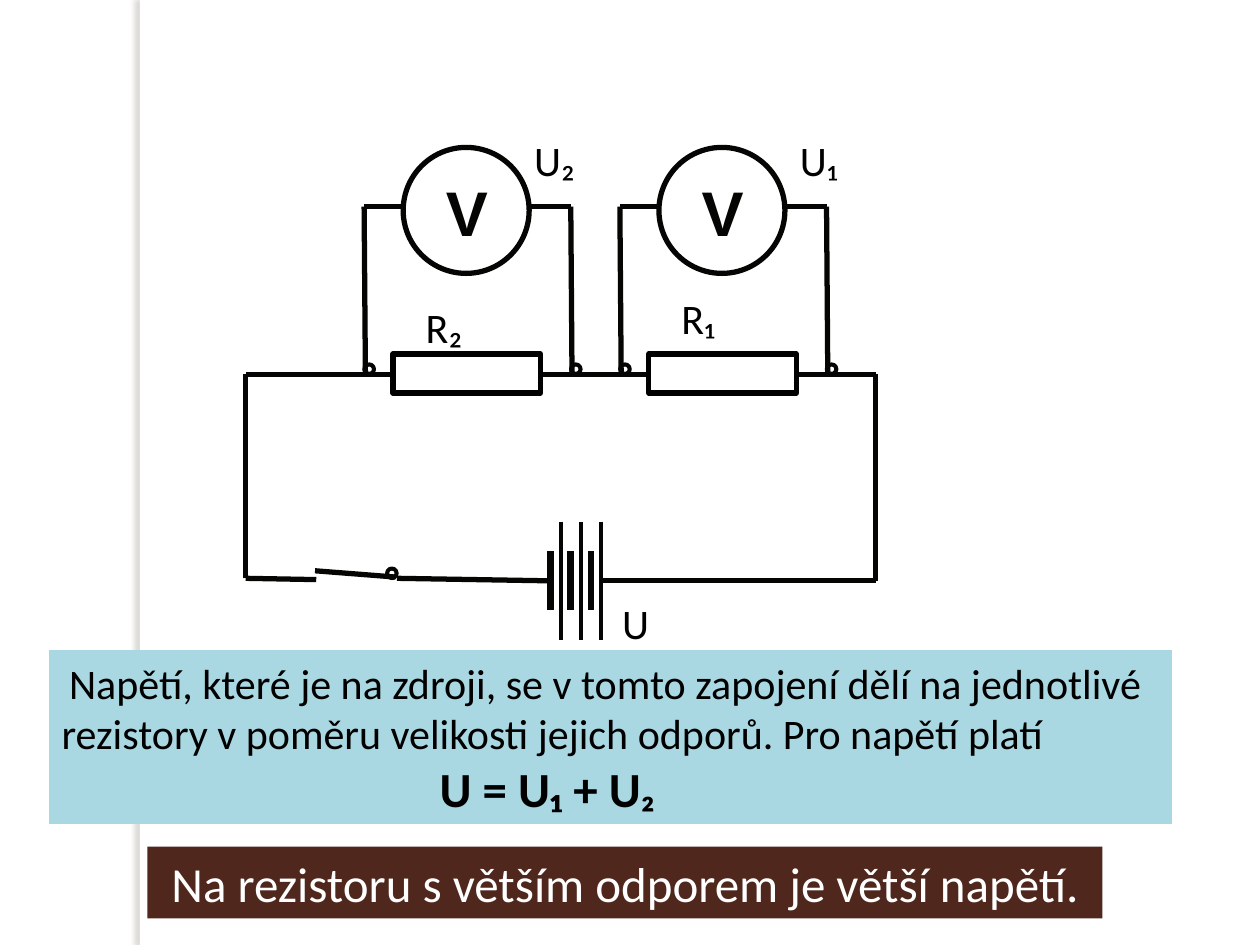
from dataclasses import dataclass

from lxml.etree import SubElement
from pptx import Presentation
from pptx.dml.color import RGBColor as Rgb
from pptx.enum.shapes import MSO_CONNECTOR as Connector, MSO_SHAPE as Shape
from pptx.enum.text import MSO_AUTO_SIZE as AutoSize, PP_ALIGN as Align
from pptx.oxml.ns import qn
from pptx.util import Inches, Pt


@dataclass(frozen=True)
class Theme:
    ink: str = "000000"
    wire: str = "050503"
    paper: str = "FFFFFF"
    note: str = "A9D7E2"
    banner: str = "4F271C"
    shade: str = "736F63"
    body_font: str = "Calibri"
    meter_font: str = "Arial"
    label_size: int = 24
    formula_size: int = 28
    meter_size: int = 36
    wire_width: float = 3
    thin_width: float = 2
    long_plate_width: float = 2.5
    short_plate_width: float = 3.75


class CircuitSlide:
    """Draws circuit elements and text on one slide in a shared theme."""

    def __init__(self, slide, theme):
        self.shapes = slide.shapes
        self.theme = theme

    def shape(self, kind, place, fill, line=None, width=None):
        item = self.shapes.add_shape(kind, *map(Inches, place))
        item.shadow.inherit = False
        item.fill.solid()
        item.fill.fore_color.rgb = Rgb.from_string(fill)
        if line:
            item.line.color.rgb = Rgb.from_string(line)
            item.line.width = Pt(width)
        else:
            item.line.fill.background()
        return item

    def edge_shadow(self, item):
        effects = item._element.spPr.find(qn("a:effectLst"))
        shadow = SubElement(effects, qn("a:outerShdw"), blurRad=str(Pt(3)),
                            dist=str(Pt(3)), dir="10800000", algn="tl", rotWithShape="0")
        color = SubElement(shadow, qn("a:srgbClr"), val=self.theme.shade)
        SubElement(color, qn("a:alpha"), val="25000")

    def wire(self, start, end, width=None):
        line = self.shapes.add_connector(Connector.STRAIGHT, *map(Inches, start + end))
        line.line.color.rgb = Rgb.from_string(self.theme.wire)
        line.line.width = Pt(width or self.theme.wire_width)
        SubElement(line._element.spPr, qn("a:effectLst"))

    def terminal(self, left, top):
        ring = self.shape(Shape.DONUT, (left, top, 0.08, 0.08), self.theme.ink,
                          self.theme.wire, self.theme.thin_width)
        ring.adjustments[0] = 0.055

    def add_span(self, para, text, **changes):
        span = para.add_run()
        span.text = text
        style = {"name": self.theme.body_font, "size": Pt(self.theme.label_size), "bold": False}
        color = changes.pop("color", self.theme.ink)
        for name, value in (style | changes).items():
            setattr(span.font, name, value)
        span.font.color.rgb = Rgb.from_string(color)

    def frame(self, box, align=Align.LEFT):
        frame = box.text_frame
        settings = {"word_wrap": True, "auto_size": AutoSize.SHAPE_TO_FIT_TEXT}
        for name, value in settings.items():
            setattr(frame, name, value)
        frame.paragraphs[0].alignment = align
        return frame

    def label(self, place, text, **changes):
        box = self.shapes.add_textbox(*map(Inches, place))
        self.add_span(self.frame(box).paragraphs[0], text, **changes)

    def battery(self, left, middle, pitch, cells):
        for cell in range(cells):
            for step, reach, width in ((0, 0.235, self.theme.short_plate_width),
                                       (1, 0.47, self.theme.long_plate_width)):
                x = left + (2 * cell + step) * pitch
                self.wire((x, middle - reach), (x, middle + reach), width)

    def metered_resistor(self, left, name_top, name):
        theme = self.theme
        right, meter, tap, rail = left + 1.64, left + 0.31, 1.64, 2.97
        for x in (left, right):
            self.terminal(x, 2.89)
            self.wire((x, tap), (x + 0.01, rail))
        self.wire((left, tap), (meter, tap))
        self.wire((meter + 0.94, tap), (right, tap))
        self.shape(Shape.OVAL, (meter, 1.17, 1, 1), theme.paper, theme.wire, theme.wire_width)
        self.label((meter + 0.24, 1.33, 0.55, 0.71), "V", name=theme.meter_font,
                   size=Pt(theme.meter_size), bold=True, color=theme.wire)
        self.shape(Shape.RECTANGLE, (left + 0.23, 2.81, 1.17, 0.31),
                   theme.paper, theme.ink, theme.wire_width)
        self.label((left + 0.39, name_top, 0.78, 0.5), name)

    def note(self, place, sentence, formula, subscript):
        box = self.shape(Shape.RECTANGLE, place, self.theme.note)
        frame = self.frame(box)
        opening = frame.paragraphs[0]
        opening._p.get_or_add_pPr().set("indent", str(Inches(0.06)))
        self.add_span(opening, sentence)
        para = frame.add_paragraph()
        para.alignment = Align.LEFT
        para._p.get_or_add_pPr().set("marL", str(Inches(3)))
        self.add_span(para, formula, size=Pt(self.theme.formula_size), bold=True)
        self.add_span(para, subscript, bold=True)

    def banner(self, place, text):
        box = self.shape(Shape.RECTANGLE, place, self.theme.banner)
        para = self.frame(box, Align.CENTER).paragraphs[0]
        self.add_span(para, text, size=Pt(self.theme.formula_size), color=self.theme.paper)


def main():
    deck = Presentation()
    deck.slide_width, deck.slide_height = Inches(10), Inches(7.5)
    page = CircuitSlide(deck.slides.add_slide(deck.slide_layouts[6]), Theme())

    page.edge_shadow(page.shape(Shape.RECTANGLE, (1.11, 0, 0.08, 7.5), page.theme.paper))

    page.terminal(3.07, 4.51)
    left, right, top, bottom = 1.95, 6.95, 2.97, 4.61
    for start, end in (
        ((2.5, 4.53), (3.14, 4.58)),
        ((4.77, bottom), (right, bottom)),
        ((2.51, 4.6), (left, 4.59)),
        ((4.37, bottom), (3.15, 4.59)),
        ((left, top), (3.12, top)),
        ((4.3, top), (5.16, top)),
        ((6.33, top), (right, top)),
        ((left, 4.59), (left, top)),
        ((right, bottom), (right, top)),
    ):
        page.wire(start, end)
    for x in (4.06, 4.77):
        page.wire((x, bottom), (x + 0.31, bottom), page.theme.thin_width)
    page.battery(4.37, bottom, 0.08, 3)

    page.metered_resistor(2.89, 2.34, "R₂")
    page.metered_resistor(4.92, 2.27, "R₁")
    for x, y, name in ((4.84, 4.69, "U"), (6.25, 1.02, "U₁"), (4.14, 1.02, "U₂")):
        page.label((x, y, 0.7, 0.5), name)

    page.note((0.39, 5.16, 8.91, 1.38),
              "Napětí, které je na zdroji, se v tomto zapojení dělí na jednotlivé "
              "rezistory v poměru velikosti jejich odporů. Pro napětí platí",
              "U = U₁ + U", "₂")
    page.banner((1.17, 6.72, 7.58, 0.57), "Na rezistoru s větším odporem je větší napětí.")
    deck.save("out.pptx")


if __name__ == "__main__":
    main()
